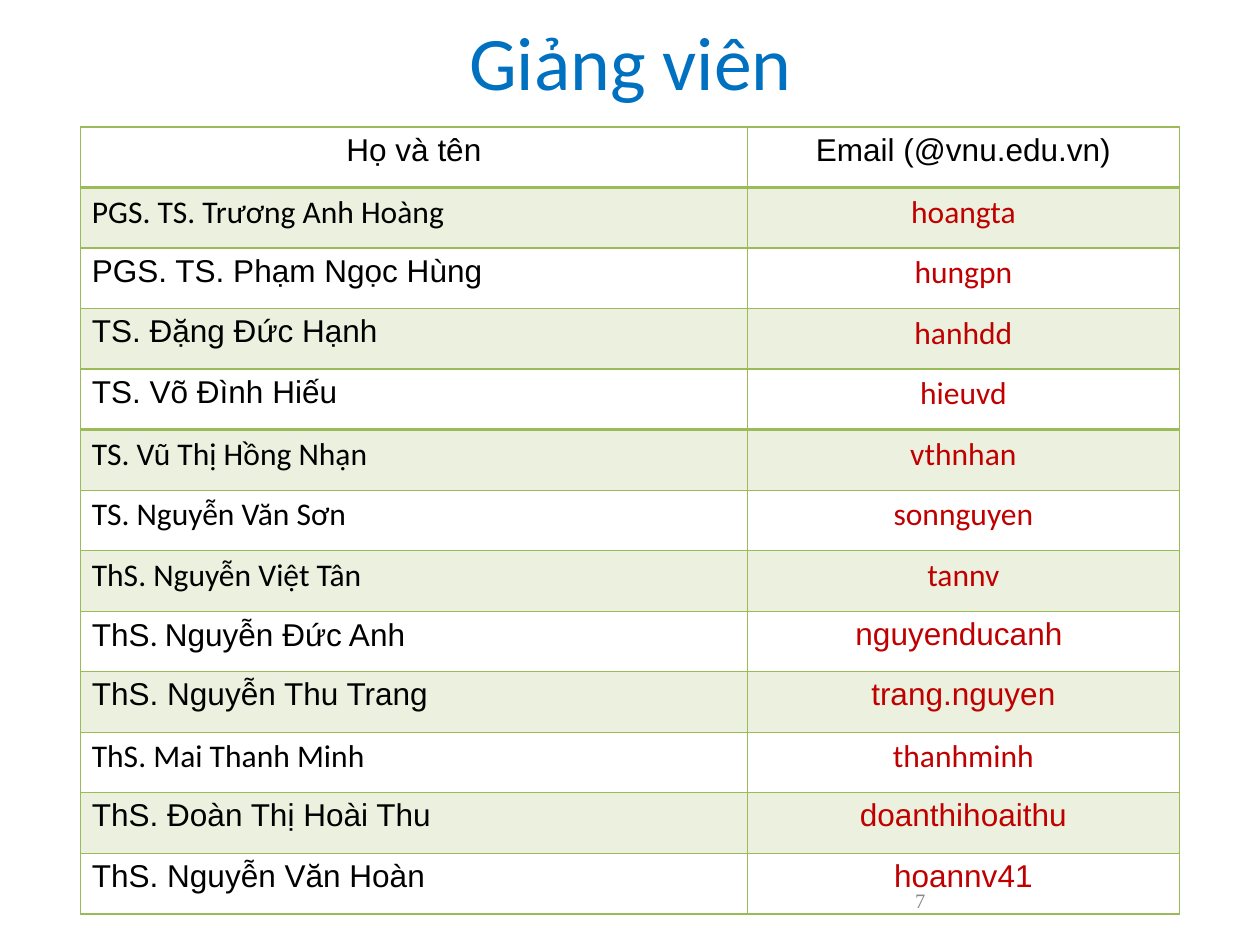
from lxml.etree import SubElement
from pptx import Presentation
from pptx.dml.color import RGBColor
from pptx.enum.text import MSO_ANCHOR as Anchor, PP_ALIGN as Align
from pptx.oxml.ns import qn
from pptx.util import Inches, Pt

GREEN, PALE_GREEN = "9BBB59", "EBF1DE"
BLACK, RED, BLUE, GRAY = "000000", "C00000", "0070C0", "888888"
ARIAL, CALIBRI = "Arial", "Calibri"


def color(value):
    return RGBColor.from_string(value)


def write(frame, text, font=ARIAL, size=20, ink=BLACK, align=Align.LEFT):
    """Add text, or a list of (text, font) pieces, to the first paragraph."""
    para = frame.paragraphs[0]
    para.alignment = align
    pieces = [(text, font)] if isinstance(text, str) else text
    for words, face in pieces:
        span = para.add_run()
        span.text = words
        span.font.name = face
        span.font.size = Pt(size)
        span.font.bold = False
        span.font.color.rgb = color(ink)


deck = Presentation()
deck.slide_width, deck.slide_height = Inches(11.11), Inches(8.33)
page = deck.slides.add_slide(deck.slide_layouts[6])

# Lecturers: name, name font, email, email font
lecturers = [
    ("PGS. TS. Trương Anh Hoàng", CALIBRI, "hoangta", CALIBRI),
    ("PGS. TS. Phạm Ngọc Hùng", ARIAL, "hungpn", CALIBRI),
    ("TS. Đặng Đức Hạnh", ARIAL, "hanhdd", CALIBRI),
    ("TS. Võ Đình Hiếu", ARIAL, "hieuvd", CALIBRI),
    ("TS. Vũ Thị Hồng Nhạn", CALIBRI, "vthnhan", CALIBRI),
    ("TS. Nguyễn Văn Sơn", CALIBRI, "sonnguyen", CALIBRI),
    ("ThS. Nguyễn Việt Tân", CALIBRI, "tannv", CALIBRI),
    ([("ThS", ARIAL), (". ", CALIBRI), ("Nguyễn Đức Anh", ARIAL)], ARIAL,
     "nguyenducanh ", ARIAL),
    ("ThS. Nguyễn Thu Trang", ARIAL, "trang.nguyen", ARIAL),
    ("ThS. Mai Thanh Minh", CALIBRI, "thanhminh", CALIBRI),
    ("ThS. Đoàn Thị Hoài Thu", ARIAL, "doanthihoaithu", ARIAL),
    ("ThS. Nguyễn Văn Hoàn", ARIAL, "hoannv41", ARIAL),
]

# Table grid
row_count = len(lecturers) + 1
table = page.shapes.add_table(row_count, 2, Inches(0.71), Inches(1.12),
                              Inches(9.69), Inches(6.94)).table
table.first_row = table.horz_banding = False
table.columns[0].width, table.columns[1].width = Inches(5.88), Inches(3.81)

# Table text
for column, heading in enumerate(["Họ và tên", "Email (@vnu.edu.vn)"]):
    write(table.cell(0, column).text_frame, heading, align=Align.CENTER)
for row, (name, name_font, email, email_font) in enumerate(lecturers, 1):
    write(table.cell(row, 0).text_frame, name, font=name_font)
    write(table.cell(row, 1).text_frame, email, font=email_font, ink=RED,
          align=Align.CENTER)

# Bands and borders, with a heavier rule under the header and the fourth name
heavy_rows = (0, 4)
for row in range(row_count):
    top = 2 if row - 1 in heavy_rows else 1
    bottom = 2 if row in heavy_rows else 1
    for column in range(2):
        cell = table.cell(row, column)
        cell.margin_left = cell.margin_right = Inches(0.1)
        cell.margin_top = cell.margin_bottom = Inches(0.05)
        properties = cell._tc.get_or_add_tcPr()
        for side, width in (("L", 1), ("R", 1), ("T", top), ("B", bottom)):
            line = SubElement(properties, qn(f"a:ln{side}"), w=str(Pt(width)))
            line_fill = SubElement(line, qn("a:solidFill"))
            SubElement(line_fill, qn("a:srgbClr"), val=GREEN)
        if row % 2:
            cell.fill.solid()
            cell.fill.fore_color.rgb = color(PALE_GREEN)
        else:
            cell.fill.background()

# Title and page number
labels = [
    ((0.56, 0.08, 10, 0.9), "Giảng viên",
     dict(font=CALIBRI, size=48, ink=BLUE, align=Align.CENTER)),
    ((7.96, 7.72, 2.59, 0.44), "7",
     dict(font="Times New Roman", size=13, ink=GRAY)),
]
for place, text, style in labels:
    box = page.shapes.add_textbox(*map(Inches, place))
    frame = box.text_frame
    frame.word_wrap = True
    frame.vertical_anchor = Anchor.MIDDLE
    frame.margin_left = frame.margin_right = Inches(0.11)
    frame.margin_top = frame.margin_bottom = Inches(0.06)
    write(frame, text, **style)

deck.save("out.pptx")
